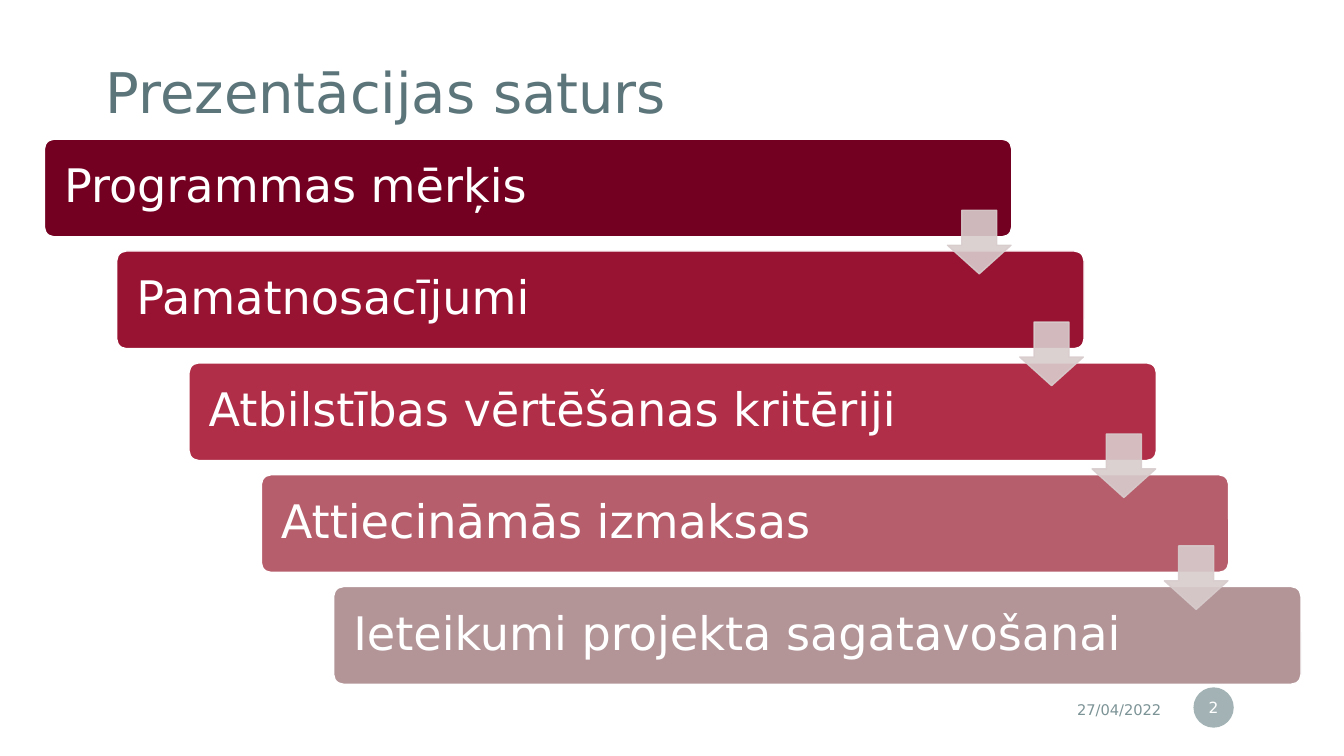
from pptx import Presentation
from pptx.dml.color import RGBColor
from pptx.enum.shapes import MSO_SHAPE
from pptx.enum.text import MSO_ANCHOR, MSO_AUTO_SIZE, PP_ALIGN
from pptx.oxml.ns import qn
from pptx.util import Pt
from lxml import etree

ROUND, ARROW, OVAL = MSO_SHAPE.ROUNDED_RECTANGLE, MSO_SHAPE.DOWN_ARROW, MSO_SHAPE.OVAL
LEFT, MID, RIGHT = PP_ALIGN.LEFT, PP_ALIGN.CENTER, PP_ALIGN.RIGHT
FONT = "DejaVu Sans"
WHITE = RGBColor(0xFF, 0xFF, 0xFF)
SLATE = RGBColor(0x5B, 0x75, 0x7A)
GREY = RGBColor(0x7C, 0x93, 0x96)
PALE = RGBColor(0xD8, 0xCC, 0xCD)
TOPICS = [
    ("Programmas mērķis", RGBColor(0x74, 0x00, 0x21)),
    ("Pamatnosacījumi", RGBColor(0x98, 0x12, 0x31)),
    ("Atbilstības vērtēšanas kritēriji", RGBColor(0xB0, 0x2E, 0x47)),
    ("Attiecināmās izmaksas", RGBColor(0xB6, 0x5E, 0x6B)),
    ("Ieteikumi projekta sagatavošanai", RGBColor(0xB3, 0x95, 0x98)),
]
STEP_X, STEP_Y = 51.65, 79.9


def write(shape, text, size, color=WHITE, align=LEFT, pad=(7.2, 3.6), space=1):
    frame = shape.text_frame
    frame.word_wrap = True
    frame.auto_size = MSO_AUTO_SIZE.NONE
    frame.vertical_anchor = MSO_ANCHOR.MIDDLE
    frame.margin_left = frame.margin_right = Pt(pad[0])
    frame.margin_top = frame.margin_bottom = Pt(pad[1])
    para = frame.paragraphs[0]
    para.text = text
    para.alignment = align
    para.line_spacing = space
    para.font.name = FONT
    para.font.size = Pt(size)
    para.font.color.rgb = color


def draw(kind, x, y, w, h, fill, line=None, alpha=100):
    """Add a flat preset shape; alpha is the opacity in percent."""
    shape = slide.shapes.add_shape(kind, Pt(x), Pt(y), Pt(w), Pt(h))
    shape.shadow.inherit = False
    shape.fill.solid()
    shape.fill.fore_color.rgb = fill
    if line is None:
        shape.line.fill.background()
    else:
        shape.line.color.rgb = line
        shape.line.width = Pt(1)
    if alpha < 100:
        for tint in shape._element.spPr.iter(qn("a:srgbClr")):
            etree.SubElement(tint, qn("a:alpha"), val=str(alpha * 1000))
    return shape


deck = Presentation()
deck.slide_width, deck.slide_height = Pt(960), Pt(540)
slide = deck.slides.add_slide(deck.slide_layouts[5])

title = slide.shapes.title
title.left, title.top, title.width, title.height = Pt(61.2), Pt(25.2), Pt(604), Pt(85.7)
write(title, "Prezentācijas saturs", 40, color=SLATE, pad=(14.4, 14.4), space=0.9)

date = slide.shapes.add_textbox(Pt(620), Pt(494), Pt(216.6), Pt(25.2))
write(date, "27/04/2022", 10.5, color=GREY, align=RIGHT)

badge = draw(OVAL, 852.5, 491, 28.8, 28.8, GREY, alpha=70)
write(badge, "2", 11, align=MID, pad=(1.44, 3.6))

for i, (topic, color) in enumerate(TOPICS):
    bar = draw(ROUND, 31.7 + i * STEP_X, 99.4 + i * STEP_Y, 691, 69.8, color, line=WHITE)
    bar.adjustments[0] = 0.1
    write(bar, topic, 33, pad=(12, 10), space=0.9)

for i in range(len(TOPICS) - 1):
    arrow = draw(ARROW, 676.8 + i * STEP_X, 150.2 + i * STEP_Y, 45.4, 45.4, PALE, line=PALE, alpha=90)
    arrow.adjustments[0] = 0.55
    arrow.adjustments[1] = 0.45

deck.save("out.pptx")
